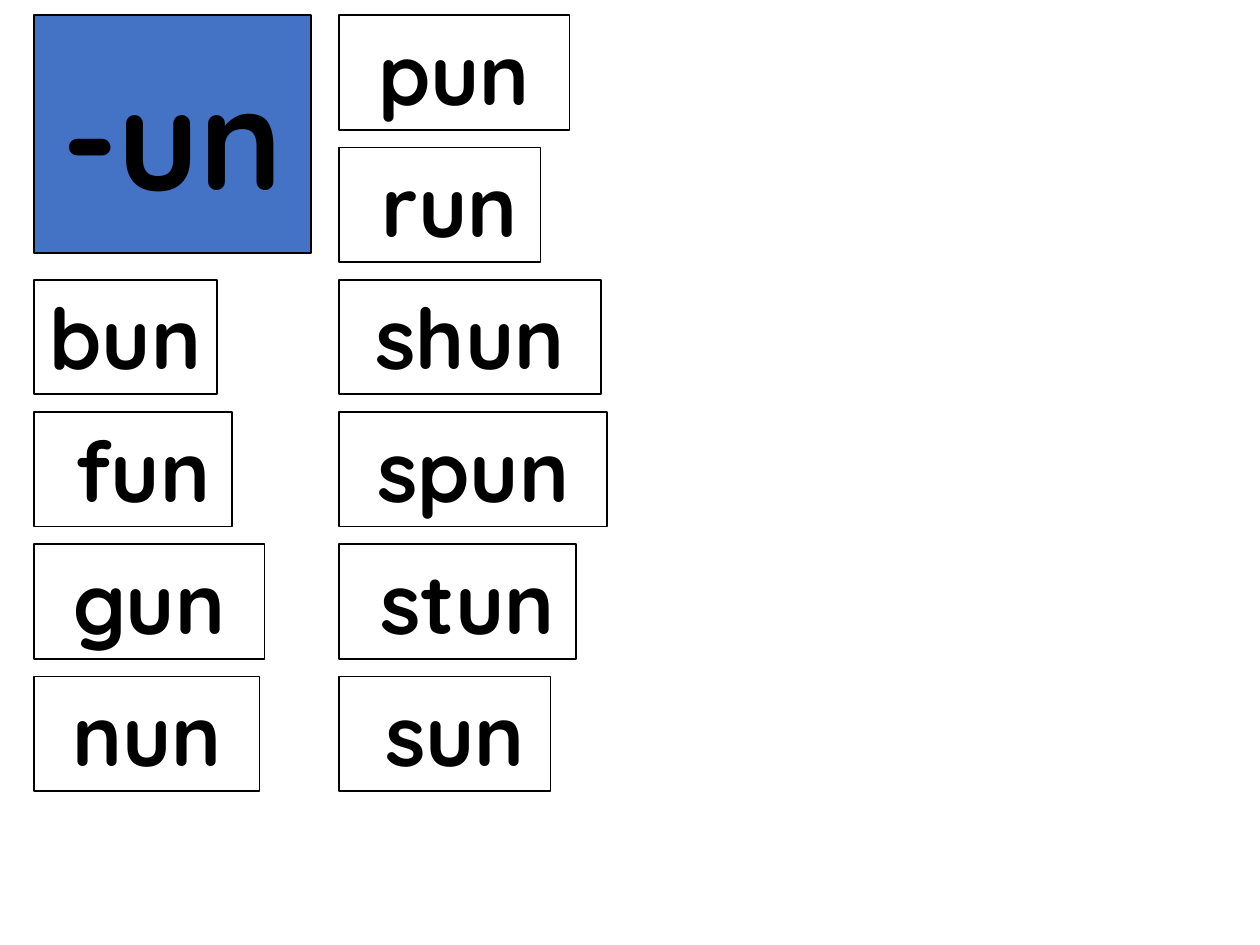
from dataclasses import dataclass

from pptx import Presentation
from pptx.dml.color import RGBColor
from pptx.enum.shapes import MSO_SHAPE
from pptx.enum.text import MSO_ANCHOR, PP_ALIGN
from pptx.util import Inches, Pt


@dataclass(frozen=True)
class Theme:
    font: str = "Quicksand"
    ink: RGBColor = RGBColor(0x00, 0x00, 0x00)
    card: RGBColor = RGBColor(0xFF, 0xFF, 0xFF)
    accent: RGBColor = RGBColor(0x44, 0x72, 0xC4)
    word_size: Pt = Pt(48)
    ending_size: Pt = Pt(80)
    border: Pt = Pt(1)


theme = Theme()
deck = Presentation()
deck.slide_width, deck.slide_height = Inches(10), Inches(7.5)
page = deck.slides.add_slide(deck.slide_layouts[6])


def add_card(text, left, top, width, height, fill, size, anchor, indent=0):
    """Add a bordered card; indent moves its centred text to the right."""
    card = page.shapes.add_shape(MSO_SHAPE.RECTANGLE, Inches(left), Inches(top),
                                 Inches(width), Inches(height))
    card.shadow.inherit = False
    card.fill.solid()
    card.fill.fore_color.rgb = fill
    card.line.color.rgb = theme.ink
    card.line.width = theme.border
    frame = card.text_frame
    frame.word_wrap = False
    frame.vertical_anchor = anchor
    frame.margin_left = Inches(0.1 + indent)
    para = frame.paragraphs[0]
    para.text = text
    para.alignment = PP_ALIGN.CENTER
    para.font.name = theme.font
    para.font.size = size
    para.font.bold = True
    para.font.color.rgb = theme.ink


# Grid: two columns of word cards at an equal pitch
TOP, PITCH, CARD_HEIGHT = 0.12, 1.05, 0.91
LEFT_COLUMN, RIGHT_COLUMN = 0.27, 2.69
INDENT = 0.16

# Each column: left edge, first row, then (word, card width, text indent)
columns = [
    (RIGHT_COLUMN, 0, [("pun", 1.83, 0), ("run", 1.6, INDENT),
                       ("shun", 2.08, 0), ("spun", 2.13, 0),
                       ("stun", 1.88, INDENT), ("sun", 1.68, INDENT)]),
    (LEFT_COLUMN, 2, [("bun", 1.45, 0), ("fun", 1.57, INDENT),
                      ("gun", 1.83, 0), ("nun", 1.79, 0)]),
]
for left, first_row, words in columns:
    for row, (word, width, indent) in enumerate(words, first_row):
        add_card(word, left, TOP + row * PITCH, width, CARD_HEIGHT, theme.card,
                 theme.word_size, MSO_ANCHOR.TOP, indent)

# Word ending
add_card("-un", LEFT_COLUMN, TOP, 2.2, 1.89, theme.accent,
         theme.ending_size, MSO_ANCHOR.MIDDLE)

deck.save("out.pptx")
